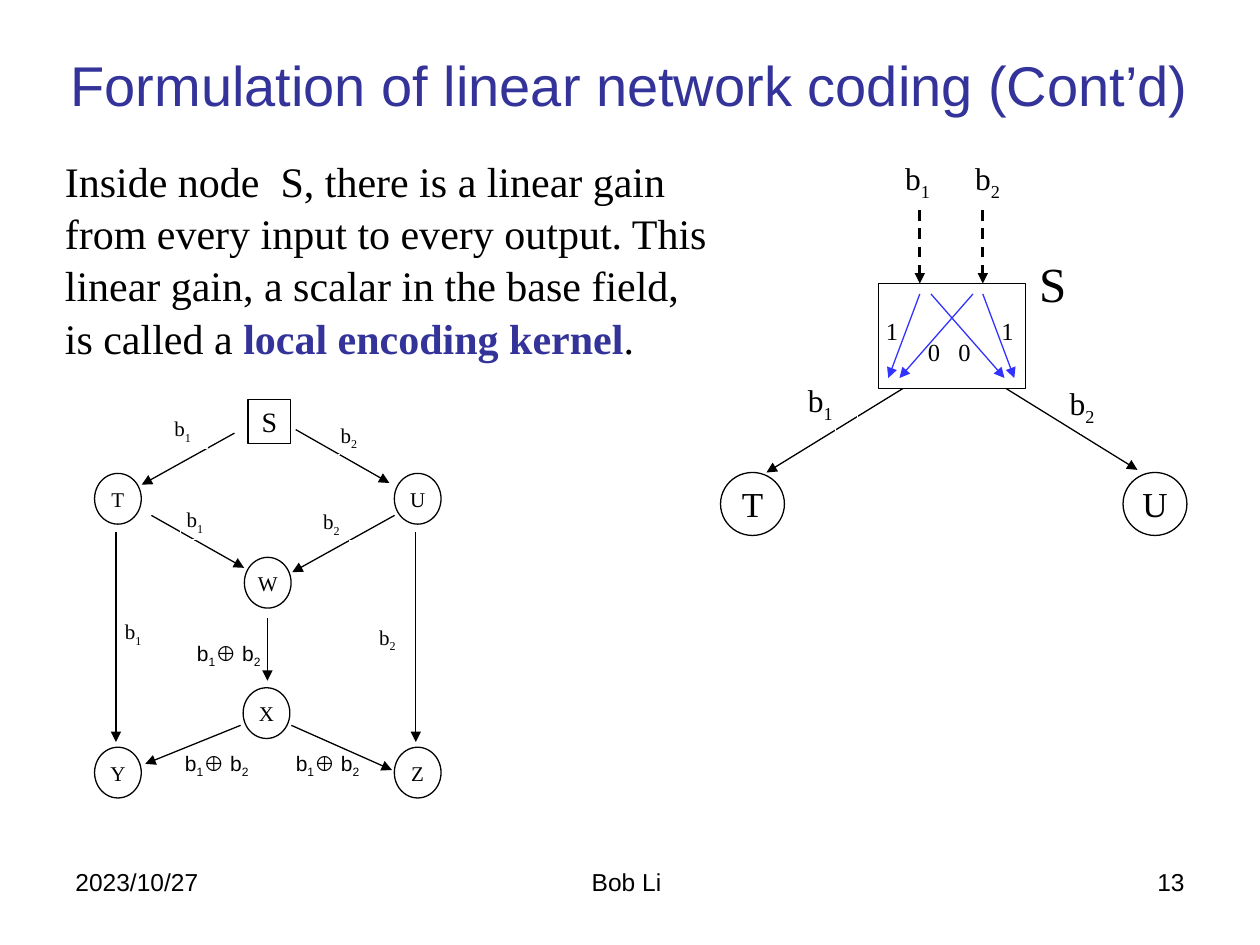
from pptx import Presentation
from pptx.dml.color import RGBColor
from pptx.enum.dml import MSO_LINE_DASH_STYLE as Dash
from pptx.enum.shapes import MSO_CONNECTOR as Connector, MSO_SHAPE as Shape
from pptx.enum.text import MSO_ANCHOR as Anchor, PP_ALIGN as Align
from pptx.oxml.ns import qn
from pptx.util import Pt
from lxml.etree import SubElement

SERIF, SANS = "Times New Roman", "Arial"
BLACK, WHITE, NAVY, BLUE = "000000", "FFFFFF", "333399", "3333FF"


def color(value):
    return RGBColor.from_string(value)


def add_span(para, text, size, font=SERIF, ink=BLACK, bold=False, subscript=False):
    span = para.add_run()
    span.text = text
    span.font.name = font
    span.font.size = Pt(size)
    span.font.bold = bold
    span.font.color.rgb = color(ink)
    if subscript:
        span.font._rPr.set("baseline", "-25000")


def prepare_text(box, align, anchor, inset_x, inset_y, wrap):
    frame = box.text_frame
    frame.word_wrap = wrap
    frame.vertical_anchor = anchor
    frame.margin_left = frame.margin_right = Pt(inset_x)
    frame.margin_top = frame.margin_bottom = Pt(inset_y)
    para = frame.paragraphs[0]
    para.alignment = align
    return para


def add_text(page, left, top, width, height, align=Align.LEFT, anchor=Anchor.TOP,
             inset_x=0.7, inset_y=0.7, wrap=True):
    box = page.shapes.add_textbox(Pt(left), Pt(top), Pt(width), Pt(height))
    return prepare_text(box, align, anchor, inset_x, inset_y, wrap)


def add_outline(page, kind, left, top, width, height, line=BLACK, fill=None):
    box = page.shapes.add_shape(kind, Pt(left), Pt(top), Pt(width), Pt(height))
    box.shadow.inherit = False
    if fill:
        box.fill.solid()
        box.fill.fore_color.rgb = color(fill)
    else:
        box.fill.background()
    box.line.color.rgb = color(line)
    box.line.width = Pt(0.75)
    return box


def add_node(page, name, center_x, center_y, width, height, size, kind=Shape.OVAL):
    box = add_outline(page, kind, center_x - width / 2, center_y - height / 2, width, height)
    para = prepare_text(box, Align.CENTER, Anchor.MIDDLE, 0, 0, False)
    add_span(para, name, size)


def add_arrow(page, start_x, start_y, end_x, end_y, ink=BLACK, width=0.75, dash=None):
    arrow = page.shapes.add_connector(
        Connector.STRAIGHT, Pt(start_x), Pt(start_y), Pt(end_x), Pt(end_y))
    arrow.line.color.rgb = color(ink)
    arrow.line.width = Pt(width)
    if dash:
        arrow.line.dash_style = dash
    SubElement(arrow.line._get_or_add_ln(), qn("a:tailEnd"), type="triangle")
    SubElement(arrow._element.spPr, qn("a:effectLst"))


def add_symbol(page, index, left, top, size):
    box = add_outline(page, Shape.RECTANGLE, left, top, 1.87 * size, 1.6 * size, WHITE)
    box.line.dash_style = Dash.DASH_DOT_DOT
    para = prepare_text(box, Align.LEFT, Anchor.TOP, 0.7, 0.7, False)
    box.text_frame.margin_left = Pt(0.7 + size / 4)
    add_span(para, "b", size)
    add_span(para, index, size, subscript=True)


def add_sum(page, left, top):
    para = add_text(page, left, top, 40, 18, inset_x=0, inset_y=0, wrap=False)
    for text, subscript in (("b", False), ("1", True), ("⊕ b", False), ("2", True)):
        add_span(para, text, 12, SANS, subscript=subscript)


def add_headings(page):
    para = add_text(page, 18, 12, 684, 72, Align.CENTER, Anchor.MIDDLE, 7.2, 3.6)
    add_span(para, "Formulation of linear network coding (Cont’d)", 32, SANS, NAVY)

    para = add_text(page, 30, 84, 383, 122, inset_x=7.2, inset_y=3.6)
    para.line_spacing = 1.04
    add_span(para, "Inside node  S, there is a linear gain from every input to every "
                   "output. This linear gain, a scalar in the base field, is called a ", 24)
    add_span(para, "local encoding kernel", 24, ink=NAVY, bold=True)
    add_span(para, ".", 24)

    for text, left, width, align in (("2023/10/27", 36, 168, Align.LEFT),
                                     ("Bob Li", 244, 228, Align.CENTER),
                                     ("13", 516, 168, Align.RIGHT)):
        para = add_text(page, left, 492, width, 37, align, inset_x=7.2, inset_y=3.6)
        add_span(para, text, 14, SANS)


def add_kernel_diagram(page):
    for name, center_x in (("T", 430), ("U", 660)):
        add_node(page, name, center_x, 288, 36.5, 36, 20)
    add_arrow(page, 516, 222, 438, 270)
    add_arrow(page, 570, 219, 650, 268.5)
    for index, left, top in (("1", 456.5, 217), ("2", 606, 219),
                             ("1", 512, 90), ("2", 552, 90)):
        add_symbol(page, index, left, top, 18)
    for x in (525.6, 561.6):
        add_arrow(page, x, 120, x, 162, width=1.5, dash=Dash.DASH)

    add_outline(page, Shape.RECTANGLE, 502, 162, 84, 60, fill=WHITE)
    for start, end in ((525.6, 507.6), (561.6, 579.6), (556, 514), (532, 574)):
        add_arrow(page, start, 168, end, 216, BLUE)
    for gain, left, top in (("1", 505.5, 180), ("1", 571.5, 180),
                            ("0", 529.5, 192), ("0", 547, 192)):
        add_span(add_text(page, left, top, 12, 21), gain, 14)
    add_span(add_text(page, 588, 144, 27, 36, Align.CENTER), "S", 28)


def add_butterfly_network(page):
    add_node(page, "S", 154, 241, 24.5, 25, 16, Shape.RECTANGLE)
    for name, x, y in (("T", 67.4, 285), ("U", 238.7, 285), ("W", 153, 333),
                       ("X", 152.3, 407.5), ("Y", 67.4, 441.5), ("Z", 238.7, 441.5)):
        add_node(page, name, x, y, 26.7, 29, 12)
    for ends in ((134, 247.5, 81, 277), (169, 245.5, 222.5, 276),
                 (86.5, 294.5, 139.5, 324.5), (225.5, 294.5, 167, 327),
                 (66.3, 304, 66.3, 424), (237.6, 304, 237.6, 424),
                 (152.8, 353, 152.8, 389),
                 (137.5, 414.5, 83, 436.5), (166.5, 414.5, 224, 440)):
        add_arrow(page, *ends)
    for index, left, top in (("1", 96, 237), ("2", 191, 240.5), ("1", 103, 289),
                             ("2", 181, 290), ("1", 67.7, 353), ("2", 213, 356)):
        add_symbol(page, index, left, top, 12)
    for left, top in ((112.5, 366), (105.7, 429), (169, 429)):
        add_sum(page, left, top)


def main():
    deck = Presentation()
    deck.slide_width, deck.slide_height = Pt(720), Pt(540)
    page = deck.slides.add_slide(deck.slide_layouts[6])
    add_headings(page)
    add_kernel_diagram(page)
    add_butterfly_network(page)
    deck.save("out.pptx")


if __name__ == "__main__":
    main()
